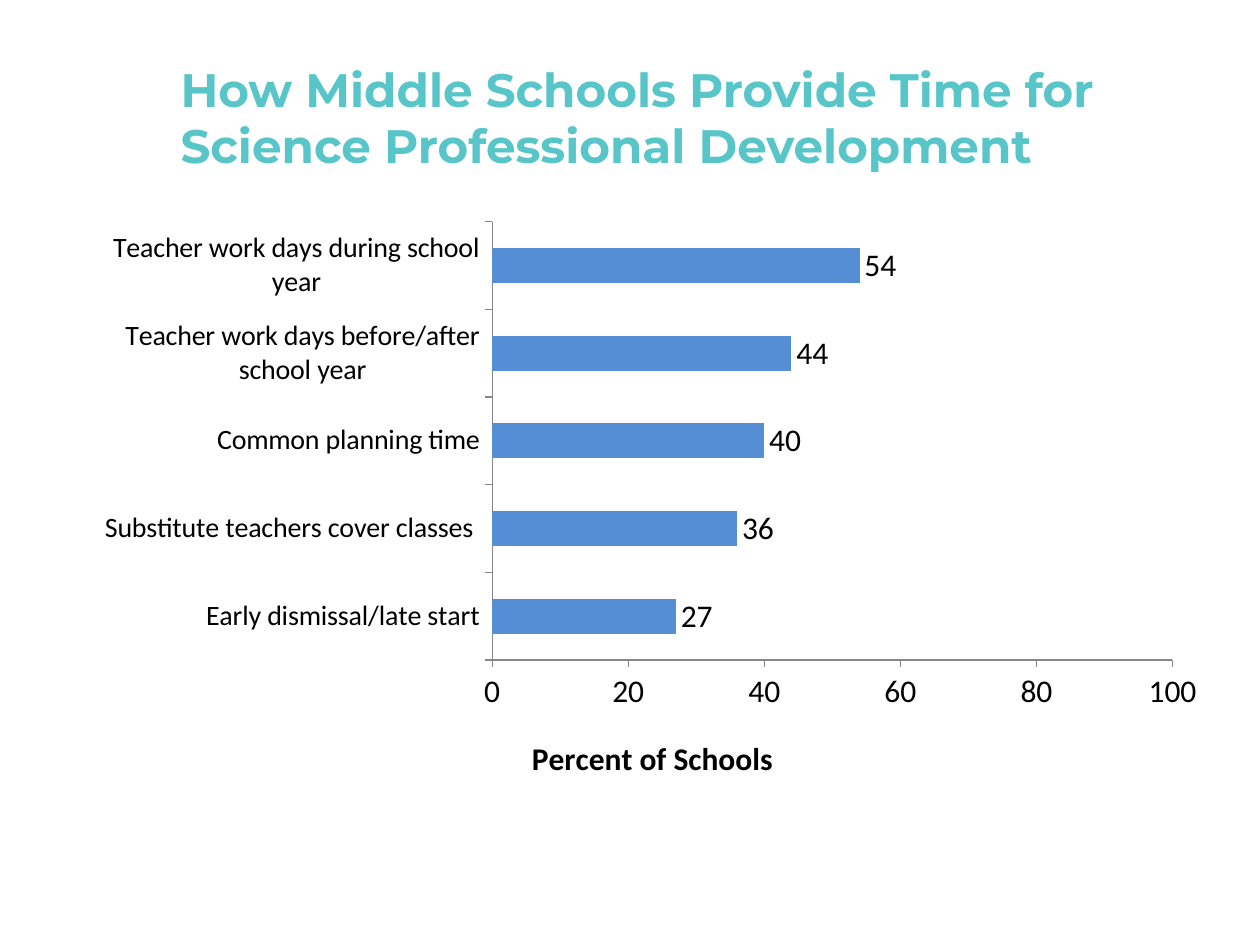
from dataclasses import dataclass

from lxml import etree
from pptx import Presentation
from pptx.chart.data import CategoryChartData
from pptx.dml.color import RGBColor
from pptx.enum.chart import XL_CHART_TYPE, XL_LABEL_POSITION, XL_TICK_MARK
from pptx.enum.text import MSO_ANCHOR, MSO_AUTO_SIZE, PP_ALIGN
from pptx.oxml.ns import qn
from pptx.util import Pt

BAR = XL_CHART_TYPE.BAR_CLUSTERED
OUTSIDE_END = XL_LABEL_POSITION.OUTSIDE_END
TICK_OUT = XL_TICK_MARK.OUTSIDE
MIDDLE = MSO_ANCHOR.MIDDLE
NO_FIT = MSO_AUTO_SIZE.NONE
LEFT = PP_ALIGN.LEFT
TITLE_ONLY = 5


@dataclass(frozen=True)
class Theme:
    title_font: str = "Montserrat"
    chart_font: str = "Calibri"
    title_color: RGBColor = RGBColor(0x58, 0xC5, 0xC9)
    text_color: RGBColor = RGBColor(0, 0, 0)
    bar_color: RGBColor = RGBColor(0x55, 0x8E, 0xD5)
    axis_color: RGBColor = RGBColor(0x86, 0x86, 0x86)
    title_size: float = 26.8
    chart_size: float = 18
    category_size: float = 16


THEME = Theme()

TITLE = "How Middle Schools Provide Time for Science Professional Development"
SCHOOL_PERCENTS = {
    "Early dismissal/late start": 27,
    "Substitute teachers cover classes ": 36,
    "Common planning time": 40,
    "Teacher work days before/after school year": 44,
    "Teacher work days during school year": 54,
}


def style_font(font, name, size, color, bold=False):
    font.name = name
    font.size = Pt(size)
    font.color.rgb = color
    font.bold = bold


def set_layout(parent, **settings):
    """Fix the place of a chart part, in fractions of the chart's size."""
    layout = parent.find(qn("c:layout"))
    if layout is None:
        layout = etree.Element(qn("c:layout"))
        parent.insert(0, layout)
    manual = etree.SubElement(layout, qn("c:manualLayout"))
    for name, value in settings.items():
        etree.SubElement(manual, qn(f"c:{name}")).set("val", str(value))


def place_title(page, box):
    title = page.shapes.title
    title.left, title.top, title.width, title.height = (Pt(n) for n in box)
    frame = title.text_frame
    frame.text = TITLE
    frame.word_wrap = True
    frame.auto_size = NO_FIT
    frame.vertical_anchor = MIDDLE
    para = frame.paragraphs[0]
    para.alignment = LEFT
    style_font(para.runs[0].font, THEME.title_font, THEME.title_size,
               THEME.title_color, bold=True)


def style_axes(chart):
    categories, percents = chart.category_axis, chart.value_axis
    for axis in (categories, percents):
        axis.has_major_gridlines = False
        axis.major_tick_mark = TICK_OUT
        axis.format.line.color.rgb = THEME.axis_color
        axis.format.line.width = Pt(0.75)
    categories.tick_labels.font.size = Pt(THEME.category_size)

    percents.minimum_scale = 0
    percents.maximum_scale = 100
    percents.major_unit = 20
    frame = percents.axis_title.text_frame
    frame.text = "Percent of Schools"
    style_font(frame.paragraphs[0].runs[0].font, THEME.chart_font,
               THEME.chart_size, THEME.text_color, bold=True)
    set_layout(percents.axis_title.element,
               xMode="edge", yMode="edge", x=0.39, y=0.88)


def place_chart(page, box):
    data = CategoryChartData()
    data.categories = list(SCHOOL_PERCENTS)
    data.add_series("Series 1", list(SCHOOL_PERCENTS.values()))
    chart = page.shapes.add_chart(BAR, *(Pt(n) for n in box), data).chart
    chart.has_legend = False
    chart.has_title = False
    style_font(chart.font, THEME.chart_font, THEME.chart_size, THEME.text_color)
    style_axes(chart)

    plot = chart.plots[0]
    plot.gap_width = 150
    plot.vary_by_categories = False
    fill = plot.series[0].format.fill
    fill.solid()
    fill.fore_color.rgb = THEME.bar_color
    plot.has_data_labels = True
    plot.data_labels.show_value = True
    plot.data_labels.position = OUTSIDE_END
    set_layout(chart.element.find(".//" + qn("c:plotArea")),
               layoutTarget="inner", xMode="edge", yMode="edge",
               x=0.36, y=0.02, w=0.6, h=0.74)


def main():
    deck = Presentation()
    deck.slide_width, deck.slide_height = Pt(720), Pt(540)
    page = deck.slides.add_slide(deck.slide_layouts[TITLE_ONLY])
    place_chart(page, (48, 120, 648, 338.4))
    place_title(page, (96, 21.6, 588, 90))
    deck.save("out.pptx")


if __name__ == "__main__":
    main()
